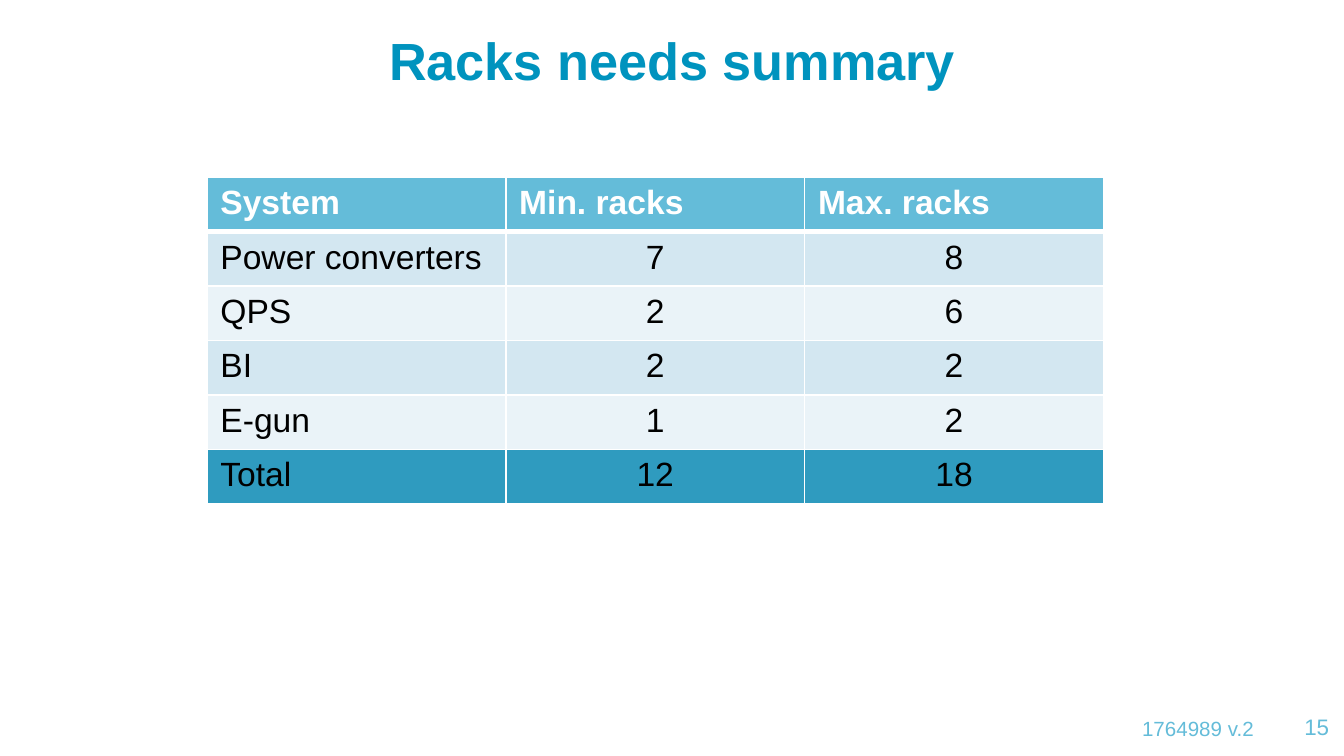
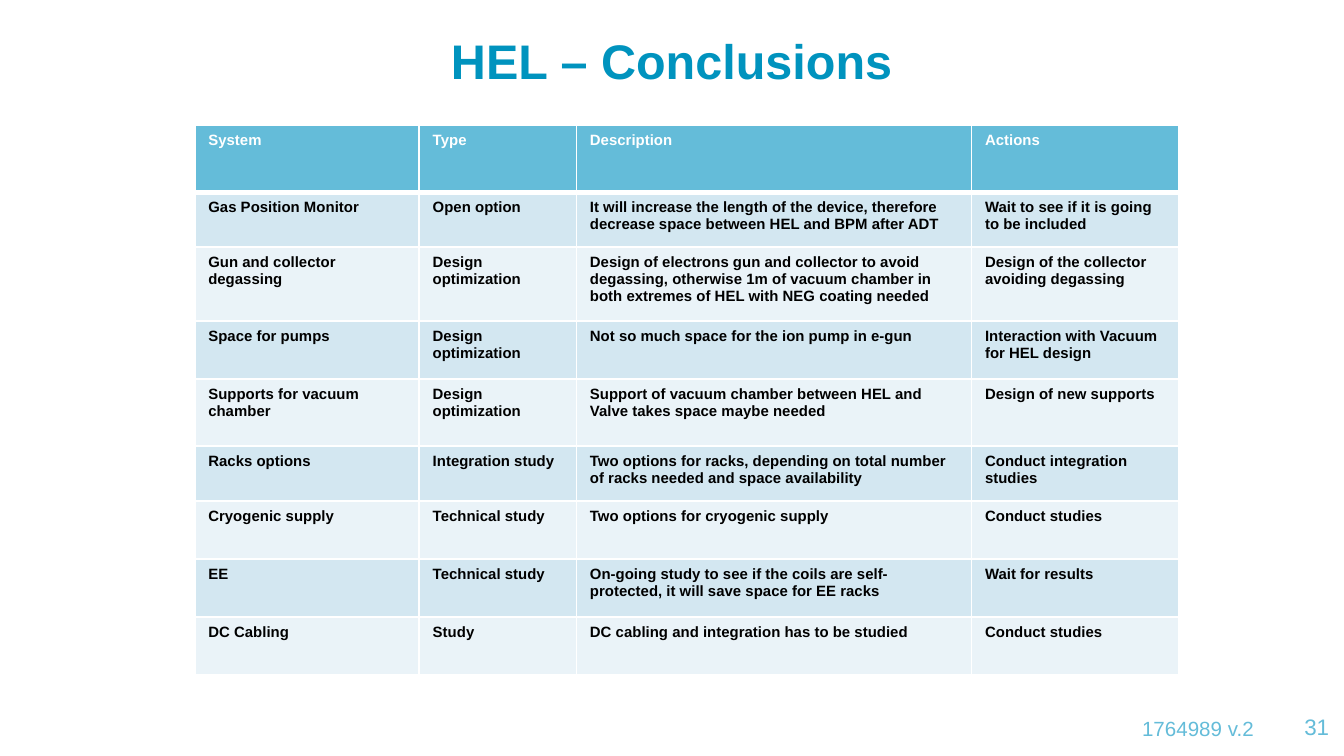
import dataclasses

import pptx
import pptx.dml.color
import pptx.enum.text
import pptx.oxml
import pptx.oxml.ns
import pptx.util

ALIGN = pptx.enum.text.PP_ALIGN
ANCHOR = pptx.enum.text.MSO_ANCHOR
TITLE_ONLY = 5
GRID_COLUMNS = 100
GRID_ROWS = 56.25


@dataclasses.dataclass(frozen=True)
class Theme:
    font: str = "Arial"
    title: str = "0093BE"
    accent: str = "64BCD9"
    total: str = "2F9BBF"
    bands: tuple = ("D3E7F1", "EAF3F8")
    light: str = "FFFFFF"
    dark: str = "000000"
    reference_size: int = 11
    number_size: int = 12
    rule: int = 1
    header_rule: int = 3


@dataclasses.dataclass(frozen=True)
class Box:
    left: float
    top: float
    width: float
    height: float

    def place(self, deck):
        column = deck.slide_width / GRID_COLUMNS
        row = deck.slide_height / GRID_ROWS
        return (round(self.left * column), round(self.top * row),
                round(self.width * column), round(self.height * row))


THEME = Theme()
TITLE_BOX = Box(6.7, 1.5, 86.6, 5.9)
REFERENCE_BOX = Box(20.8, 52.1, 72.5, 3)
NUMBER_BOX = Box(95, 52.1, 3.9, 3)

RACKS = [
    ("System", "Min. racks", "Max. racks"),
    ("Power converters", "7", "8"),
    ("QPS", "2", "6"),
    ("BI", "2", "2"),
    ("E-gun", "1", "2"),
    ("Total", "12", "18"),
]

CONCLUSIONS = [
    ("System", "Type", "Description", "Actions"),
    ("Gas Position Monitor", "Open option",
     "It will increase the length of the device, therefore decrease space "
     "between HEL and BPM after ADT",
     "Wait to see if it is going to be included"),
    ("Gun and collector degassing", "Design optimization",
     "Design of electrons gun and collector to avoid degassing, otherwise 1m "
     "of vacuum chamber in both extremes of HEL with NEG coating needed",
     "Design of the collector avoiding degassing"),
    ("Space for pumps", "Design optimization",
     "Not so much space for the ion pump in e-gun",
     "Interaction with Vacuum for HEL design"),
    ("Supports for vacuum chamber", "Design optimization",
     "Support of vacuum chamber between HEL and Valve takes space maybe needed",
     "Design of new supports"),
    ("Racks options", "Integration study",
     "Two options for racks, depending on total number of racks needed and "
     "space availability",
     "Conduct integration studies"),
    ("Cryogenic supply", "Technical study",
     "Two options for cryogenic supply", "Conduct studies"),
    ("EE", "Technical study",
     "On-going study to see if the coils are self-protected, it will save "
     "space for EE racks",
     "Wait for results"),
    ("DC Cabling", "Study",
     "DC cabling and integration has to be studied", "Conduct studies"),
]


def rgb(colour):
    return pptx.dml.color.RGBColor.from_string(colour)


def write(frame, text, size, colour, align, bold=False):
    frame.text = text
    paragraph = frame.paragraphs[0]
    paragraph.alignment = align
    paragraph.font.name = THEME.font
    paragraph.font.size = pptx.util.Pt(size)
    paragraph.font.bold = bold
    paragraph.font.color.rgb = rgb(colour)


def write_line(shape, anchor, *text_style):
    frame = shape.text_frame
    frame.margin_left = frame.margin_right = 0
    frame.margin_top = frame.margin_bottom = 0
    frame.word_wrap = True
    frame.auto_size = pptx.enum.text.MSO_AUTO_SIZE.NONE
    frame.vertical_anchor = anchor
    write(frame, *text_style)


def add_title(deck, slide, box, text, size):
    title = slide.shapes.title
    title.left, title.top, title.width, title.height = box.place(deck)
    write_line(title, ANCHOR.MIDDLE, text, size, THEME.title, ALIGN.CENTER, True)


def add_footer(deck, slide, number):
    for box, text, size in (
        (REFERENCE_BOX, "1764989 v.2", THEME.reference_size),
        (NUMBER_BOX, number, THEME.number_size),
    ):
        line = slide.shapes.add_textbox(*box.place(deck))
        write_line(line, ANCHOR.BOTTOM, text, size, THEME.accent, ALIGN.RIGHT)


def add_borders(cell, top, bottom):
    properties = cell._tc.get_or_add_tcPr()
    sides = {"L": THEME.rule, "R": THEME.rule, "T": top, "B": bottom}
    for side, width in sides.items():
        properties.append(pptx.oxml.parse_xml(
            f'<a:ln{side} {pptx.oxml.ns.nsdecls("a")} w="{pptx.util.Pt(width)}">'
            f'<a:solidFill><a:srgbClr val="{THEME.light}"/></a:solidFill>'
            f'</a:ln{side}>'))


def share_out(tracks, total, weights, attribute):
    for track, weight in zip(tracks, weights):
        setattr(track, attribute, round(total * weight / sum(weights)))


def row_fill(index, label):
    if index == 0:
        return THEME.accent
    if label == "Total":
        return THEME.total
    return THEME.bands[(index - 1) % 2]


def add_system_table(deck, slide, box, records, columns, rows, size,
                     bold=False, value_align=ALIGN.LEFT):
    left, top, width, height = box.place(deck)
    table = slide.shapes.add_table(
        len(records), len(columns), left, top, width, height).table
    table.horz_banding = False
    share_out(table.columns, width, columns, "width")
    share_out(table.rows, height, rows, "height")
    for r, record in enumerate(records):
        header = r == 0
        for c, text in enumerate(record):
            cell = table.cell(r, c)
            add_borders(cell,
                        THEME.header_rule if r == 1 else THEME.rule,
                        THEME.header_rule if header else THEME.rule)
            cell.fill.solid()
            cell.fill.fore_color.rgb = rgb(row_fill(r, record[0]))
            write(cell.text_frame, text, size,
                  THEME.light if header else THEME.dark,
                  ALIGN.LEFT if header or c == 0 else value_align,
                  header or bold)


def add_table_slide(deck, title, title_size, number, *table, **table_style):
    slide = deck.slides.add_slide(deck.slide_layouts[TITLE_ONLY])
    add_title(deck, slide, TITLE_BOX, title, title_size)
    add_footer(deck, slide, number)
    add_system_table(deck, slide, *table, **table_style)


def main():
    deck = pptx.Presentation()
    deck.slide_width = pptx.util.Inches(10)
    deck.slide_height = pptx.util.Inches(5.625)
    add_table_slide(
        deck, "Racks needs summary", 28, "15",
        Box(15.4, 13.2, 66.7, 24.3), RACKS, [1] * 3, [1] * 6, 18,
        value_align=ALIGN.CENTER)
    add_table_slide(
        deck, "HEL – Conclusions", 26, "31",
        Box(14.5, 9.3, 73.2, 40.9), CONCLUSIONS,
        [16.7, 11.7, 29.4, 15.4],
        [5, 4.1, 5.5, 4.3, 5, 4.1, 4.3, 4.3, 4.3], 8, bold=True)
    deck.save("out.pptx")


if __name__ == "__main__":
    main()
